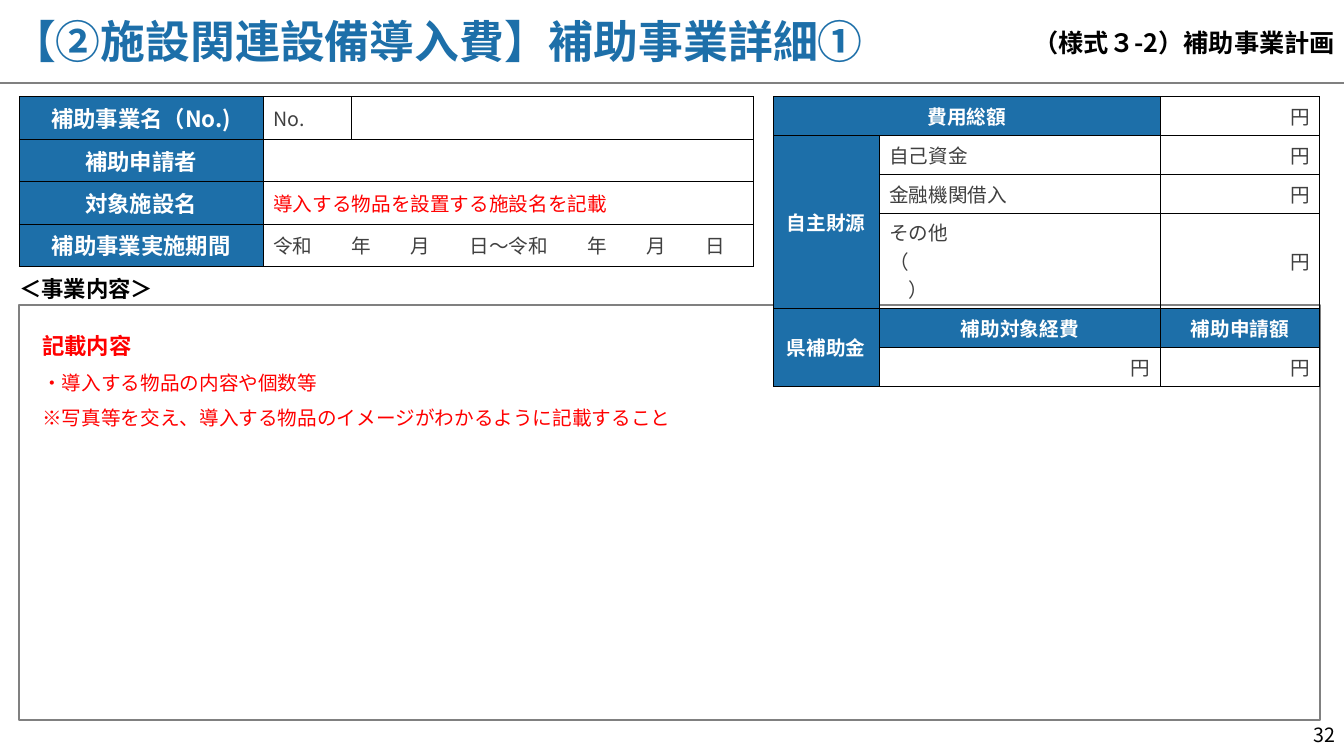
import dataclasses

import lxml.etree
import pptx
import pptx.dml.color
import pptx.enum.shapes
import pptx.enum.text
import pptx.oxml.ns
import pptx.util

Inches = pptx.util.Inches
Align = pptx.enum.text.PP_ALIGN
Anchor = pptx.enum.text.MSO_ANCHOR
qn = pptx.oxml.ns.qn


@dataclasses.dataclass(frozen=True)
class Theme:
    font: str = "Noto Sans CJK JP"
    blue: str = "1D6FA9"
    black: str = "000000"
    white: str = "FFFFFF"
    dark: str = "404040"
    gray: str = "808080"
    red: str = "FF0000"
    title: int = 32
    form: int = 18
    heading: int = 16
    body: int = 14
    rule: float = 1.5
    border: float = 0.5


def rgb(color):
    return pptx.dml.color.RGBColor.from_string(color)


class FormSlide:
    def __init__(self, deck, theme):
        self.theme = theme
        self.slide = deck.slides.add_slide(deck.slide_layouts[5])

    def add_span(self, para, text, size, color, bold=False, align=Align.LEFT, spacing=None):
        para.alignment = align
        if spacing:
            para.line_spacing = spacing
        span = para.add_run()
        span.text = text
        span.font.size = pptx.util.Pt(size)
        span.font.bold = bold
        span.font.name = self.theme.font
        span.font.color.rgb = rgb(color)
        east_asian = lxml.etree.SubElement(span.font._element, qn("a:ea"))
        east_asian.set("typeface", self.theme.font)

    def frame(self, box, anchor, insets):
        frame = box.text_frame
        frame.word_wrap = True
        frame.auto_size = pptx.enum.text.MSO_AUTO_SIZE.NONE
        frame.vertical_anchor = anchor
        frame.margin_left = frame.margin_right = Inches(insets[0])
        frame.margin_top = frame.margin_bottom = Inches(insets[1])
        return frame

    def title(self, text, left, top, width, height):
        box = self.slide.shapes.title
        box.left, box.top = Inches(left), Inches(top)
        box.width, box.height = Inches(width), Inches(height)
        frame = self.frame(box, Anchor.MIDDLE, (0.1, 0.05))
        self.add_span(frame.paragraphs[0], text, self.theme.title, self.theme.blue, True)

    def text(self, place, lines, anchor=Anchor.TOP, insets=(0, 0), **style):
        box = self.slide.shapes.add_textbox(*map(Inches, place))
        frame = self.frame(box, anchor, insets)
        for index, (text, size, color, bold) in enumerate(lines):
            para = frame.add_paragraph() if index else frame.paragraphs[0]
            self.add_span(para, text, size, color, bold, **style)

    def rule(self, left, right, top):
        line = self.slide.shapes.add_connector(
            pptx.enum.shapes.MSO_CONNECTOR.STRAIGHT,
            Inches(left), Inches(top), Inches(right), Inches(top))
        line.line.color.rgb = rgb(self.theme.gray)
        line.line.width = pptx.util.Pt(self.theme.rule)
        lxml.etree.SubElement(line._element.spPr, qn("a:effectLst"))

    def outline(self, *place):
        box = self.slide.shapes.add_shape(
            pptx.enum.shapes.MSO_SHAPE.RECTANGLE, *map(Inches, place))
        box.shadow.inherit = False
        box.fill.background()
        box.line.color.rgb = rgb(self.theme.gray)
        box.line.width = pptx.util.Pt(self.theme.rule)

    def border(self, cell):
        properties = cell._tc.get_or_add_tcPr()
        for side in ("a:lnL", "a:lnR", "a:lnT", "a:lnB"):
            line = lxml.etree.SubElement(properties, qn(side))
            line.set("w", str(pptx.util.Pt(self.theme.border)))
            fill = lxml.etree.SubElement(line, qn("a:solidFill"))
            lxml.etree.SubElement(fill, qn("a:srgbClr")).set("val", self.theme.black)

    def table(self, left, top, columns, rows, entries, head_size):
        theme = self.theme
        styles = {
            "head": (head_size, theme.white, True, Align.CENTER),
            "entry": (theme.body, theme.dark, False, Align.LEFT),
            "amount": (theme.body, theme.dark, False, Align.RIGHT),
            "hint": (theme.body, theme.red, False, Align.LEFT),
        }
        table = self.slide.shapes.add_table(
            len(rows), len(columns), Inches(left), Inches(top),
            Inches(sum(columns)), Inches(sum(rows))).table
        table.first_row = table.horz_banding = False
        for column, width in zip(table.columns, columns):
            column.width = Inches(width)
        for row, height in zip(table.rows, rows):
            row.height = Inches(height)
        for cell in table.iter_cells():
            self.border(cell)
            cell.fill.background()
            cell.vertical_anchor = Anchor.MIDDLE
        for row, column, kind, text, height, width in entries:
            cell = table.cell(row, column)
            if height * width > 1:
                cell.merge(table.cell(row + height - 1, column + width - 1))
            if kind == "head":
                cell.fill.solid()
                cell.fill.fore_color.rgb = rgb(theme.blue)
            if text:
                self.add_span(cell.text_frame.paragraphs[0], text, *styles[kind])
        for cell in table.iter_cells():
            para = cell.text_frame.paragraphs[0]
            if not para.runs:
                ending = lxml.etree.SubElement(para._p, qn("a:endParaRPr"))
                ending.set("sz", str(theme.body * 100))


def main():
    theme = Theme()
    deck = pptx.Presentation()
    deck.slide_width, deck.slide_height = Inches(13.33), Inches(7.5)
    page = FormSlide(deck, theme)

    page.rule(0, 13.33, 0.82)
    page.text((12.67, 7.12, 0.67, 0.38), [("32", theme.body, theme.black, False)],
              insets=(0.1, 0.05), align=Align.RIGHT)
    page.outline(0.19, 3.03, 12.9, 4.11)
    page.text((0.19, 2.6, 3.04, 0.56),
              [("＜事業内容＞", theme.heading, theme.black, True)], spacing=1.5)
    page.text((8.28, 0.09, 5.06, 0.66),
              [("（様式３-2）補助事業計画", theme.form, theme.black, True)],
              anchor=Anchor.MIDDLE, insets=(0.1, 0.04), align=Align.RIGHT)

    labels = ["補助事業名（No.)", "補助申請者", "対象施設名", "補助事業実施期間"]
    project = [(row, 0, "head", label, 1, 1) for row, label in enumerate(labels)]
    project += [
        (0, 1, "entry", "No.", 1, 1),
        (1, 1, "entry", "", 1, 2),
        (2, 1, "hint", "導入する物品を設置する施設名を記載", 1, 2),
        (3, 1, "entry", "令和　　年　　月　　日～令和　　年　　月　　日", 1, 2),
    ]
    page.table(0.19, 0.96, [2.42, 0.87, 3.99], [0.41] * 4, project, theme.heading)

    funding = [
        (0, 0, "head", "費用総額", 1, 2),
        (1, 0, "head", "自主財源", 3, 1),
        (1, 1, "entry", "自己資金", 1, 1),
        (2, 1, "entry", "金融機関借入", 1, 1),
        (3, 1, "entry", "その他（　　　　　　　　　　　　　）", 1, 1),
        (4, 0, "head", "県補助金", 2, 1),
        (4, 1, "head", "補助対象経費", 1, 1),
        (4, 2, "head", "補助申請額", 1, 1),
        (5, 1, "amount", "円", 1, 1),
    ]
    funding += [(row, 2, "amount", "円", 1, 1) for row in (0, 1, 2, 3, 5)]
    page.table(7.67, 0.96, [1.05, 2.79, 1.58], [0.3] * 6, funding, theme.body)

    page.title("【②施設関連設備導入費】補助事業詳細①", 0.01, 0, 10.59, 0.8)
    page.text((0.42, 3.16, 6.5, 2.34), [
        ("記載内容", theme.heading, theme.red, True),
        ("・導入する物品の内容や個数等", theme.body, theme.red, False),
        ("※写真等を交え、導入する物品のイメージがわかるように記載すること",
         theme.body, theme.red, False),
    ], spacing=1.5)
    deck.save("out.pptx")


if __name__ == "__main__":
    main()
